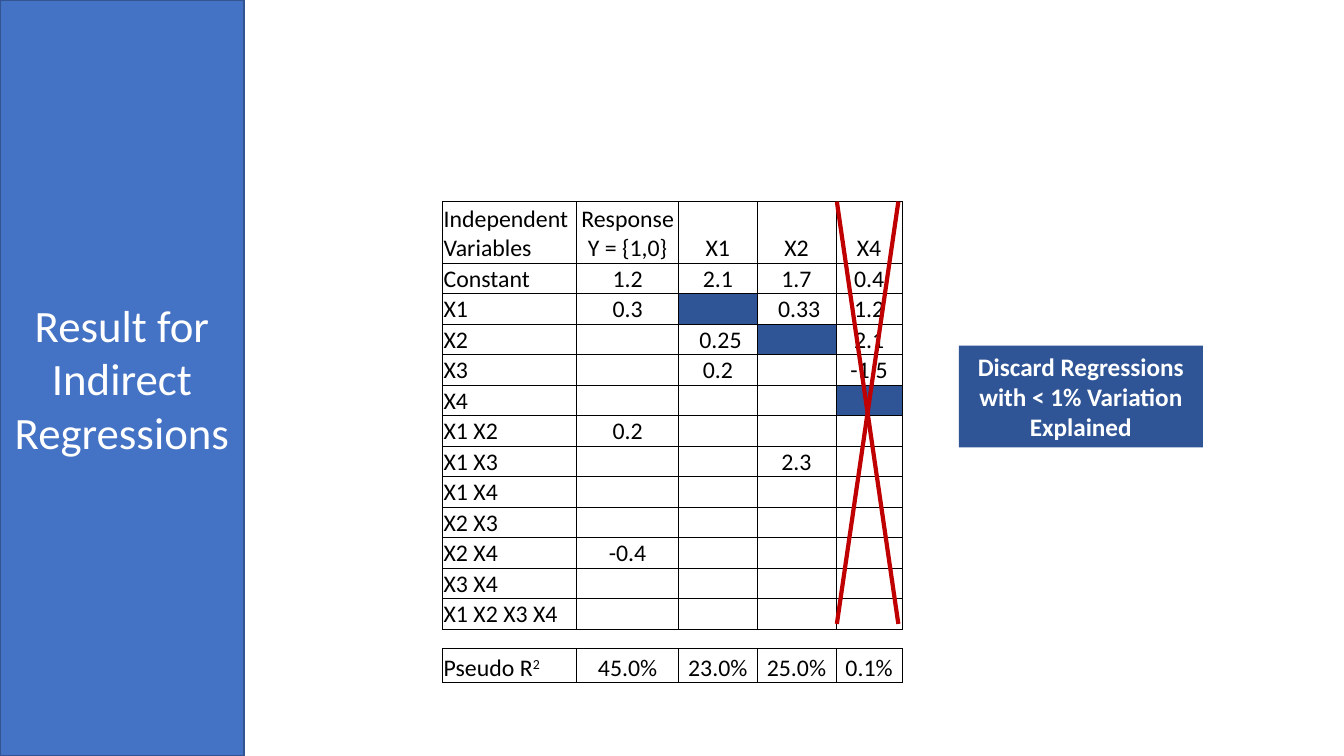
from lxml.etree import SubElement
from pptx import Presentation
from pptx.dml.color import RGBColor
from pptx.enum.shapes import MSO_CONNECTOR as Connector, MSO_SHAPE as Shape
from pptx.enum.text import MSO_ANCHOR as Anchor, PP_ALIGN as Align
from pptx.oxml.ns import qn
from pptx.util import Inches, Pt

FONT = "Calibri"
BLUE, EDGE, NAVY = "4472C4", "325491", "2F5597"
RED, BLACK, WHITE = "C00000", "000000", "FFFFFF"

TITLE = "Result for Indirect Regressions"
NOTE = "Discard Regressions with < 1% Variation Explained"
FILLED = None  # a cell where a variable meets itself
ROWS = [
    ["Independent Variables", "Response Y = {1,0}", "X1", "X2", "X4"],
    ["Constant", "1.2", "2.1", "1.7", "0.4"],
    ["X1", "0.3", FILLED, " 0.33", "1.2"],
    ["X2", "", " 0.25", FILLED, "2.1"],
    ["X3", "", "0.2", "", "-1.5"],
    ["X4", "", "", "", FILLED],
    ["X1 X2", "0.2", "", "", ""],
    ["X1 X3", "", "", "2.3", ""],
    ["X1 X4", "", "", "", ""],
    ["X2 X3", "", "", "", ""],
    ["X2 X4", "-0.4", "", "", ""],
    ["X3 X4", "", "", "", ""],
    ["X1 X2 X3 X4", "", "", "", ""],
    [""] * 5,
    ["Pseudo R", "45.0%", "23.0%", "25.0%", "0.1%"],
]
GAP_ROW = 13
COLUMN_WIDTHS = [1.33, 1.01, 0.78, 0.78, 0.66]
ROW_HEIGHTS = [0.61] + [0.303] * 12 + [0.19, 0.34]
TABLE_LEFT, TABLE_TOP = 4.39, 2
CROSS_LEFT, CROSS_RIGHT, CROSS_BOTTOM = 8.3, 8.91, 6.19


def color(value):
    return RGBColor.from_string(value)


def write(para, text, size=17, ink=BLACK, bold=False, align=Align.CENTER, raised=False):
    """Add one formatted run to a paragraph."""
    para.alignment = align
    span = para.add_run()
    span.text = text
    font = span.font
    font.name, font.size, font.bold = FONT, Pt(size), bold
    font.color.rgb = color(ink)
    if raised:
        span._r.get_or_add_rPr().set("baseline", "30000")


def add_panel(slide, left, top, width, height, fill, text, edge=None, **style):
    panel = slide.shapes.add_shape(
        Shape.RECTANGLE, Inches(left), Inches(top), Inches(width), Inches(height))
    panel.shadow.inherit = False
    panel.fill.solid()
    panel.fill.fore_color.rgb = color(fill)
    if edge:
        panel.line.color.rgb = color(edge)
        panel.line.width = Pt(1)
    else:
        panel.line.fill.background()
    frame = panel.text_frame
    frame.word_wrap = True
    frame.vertical_anchor = Anchor.MIDDLE
    write(frame.paragraphs[0], text, **style)


def set_borders(cell, drawn):
    """Draw thin black lines on the named sides and none on the others."""
    properties = cell._tc.get_or_add_tcPr()
    for side in "LRTB":
        line = SubElement(properties, qn(f"a:ln{side}"), w=str(Pt(0.5)))
        if side in drawn:
            fill = SubElement(line, qn("a:solidFill"))
            SubElement(fill, qn("a:srgbClr"), val=BLACK)
        else:
            SubElement(line, qn("a:noFill"))


def fill_cell(cell, text, align, drawn):
    cell.margin_left = cell.margin_right = cell.margin_top = Inches(0.01)
    cell.margin_bottom = 0
    cell.vertical_anchor = Anchor.BOTTOM
    set_borders(cell, drawn)
    if text is FILLED:
        cell.fill.solid()
        cell.fill.fore_color.rgb = color(NAVY)
    else:
        cell.fill.background()
    para = cell.text_frame.paragraphs[0]
    if text:
        write(para, text, align=align)
    else:
        SubElement(para._p, qn("a:endParaRPr"), sz="800")


def add_results(slide):
    table = slide.shapes.add_table(
        len(ROWS), len(COLUMN_WIDTHS), Inches(TABLE_LEFT), Inches(TABLE_TOP),
        Inches(sum(COLUMN_WIDTHS)), Inches(sum(ROW_HEIGHTS))).table
    table.first_row = table.horz_banding = False
    for column, width in zip(table.columns, COLUMN_WIDTHS):
        column.width = Inches(width)
    for row, height in zip(table.rows, ROW_HEIGHTS):
        row.height = Inches(height)
    for r, values in enumerate(ROWS):
        for c, text in enumerate(values):
            fill_cell(table.cell(r, c), text,
                      align=Align.CENTER if c else Align.LEFT,
                      drawn="TB" if r == GAP_ROW else "LRTB")
    label = table.cell(len(ROWS) - 1, 0).text_frame.paragraphs[0]
    write(label, "2", align=Align.LEFT, raised=True)


def add_stroke(slide, start, end):
    stroke = slide.shapes.add_connector(
        Connector.STRAIGHT, Inches(start), Inches(TABLE_TOP), Inches(end), Inches(CROSS_BOTTOM))
    stroke.line.color.rgb = color(RED)
    stroke.line.width = Pt(3)
    SubElement(stroke._element.spPr, qn("a:effectLst"))


def main():
    deck = Presentation()
    deck.slide_width, deck.slide_height = Inches(13.33), Inches(7.5)
    page = deck.slides.add_slide(deck.slide_layouts[6])
    add_panel(page, 0, 0, 2.42, 7.5, BLUE, TITLE, edge=EDGE, size=32, ink=WHITE)
    add_results(page)
    add_panel(page, 9.51, 3.43, 2.42, 1.01, NAVY, NOTE, size=18, ink=WHITE, bold=True)
    add_stroke(page, CROSS_LEFT, CROSS_RIGHT)
    add_stroke(page, CROSS_RIGHT, CROSS_LEFT)
    deck.save("out.pptx")


if __name__ == "__main__":
    main()
